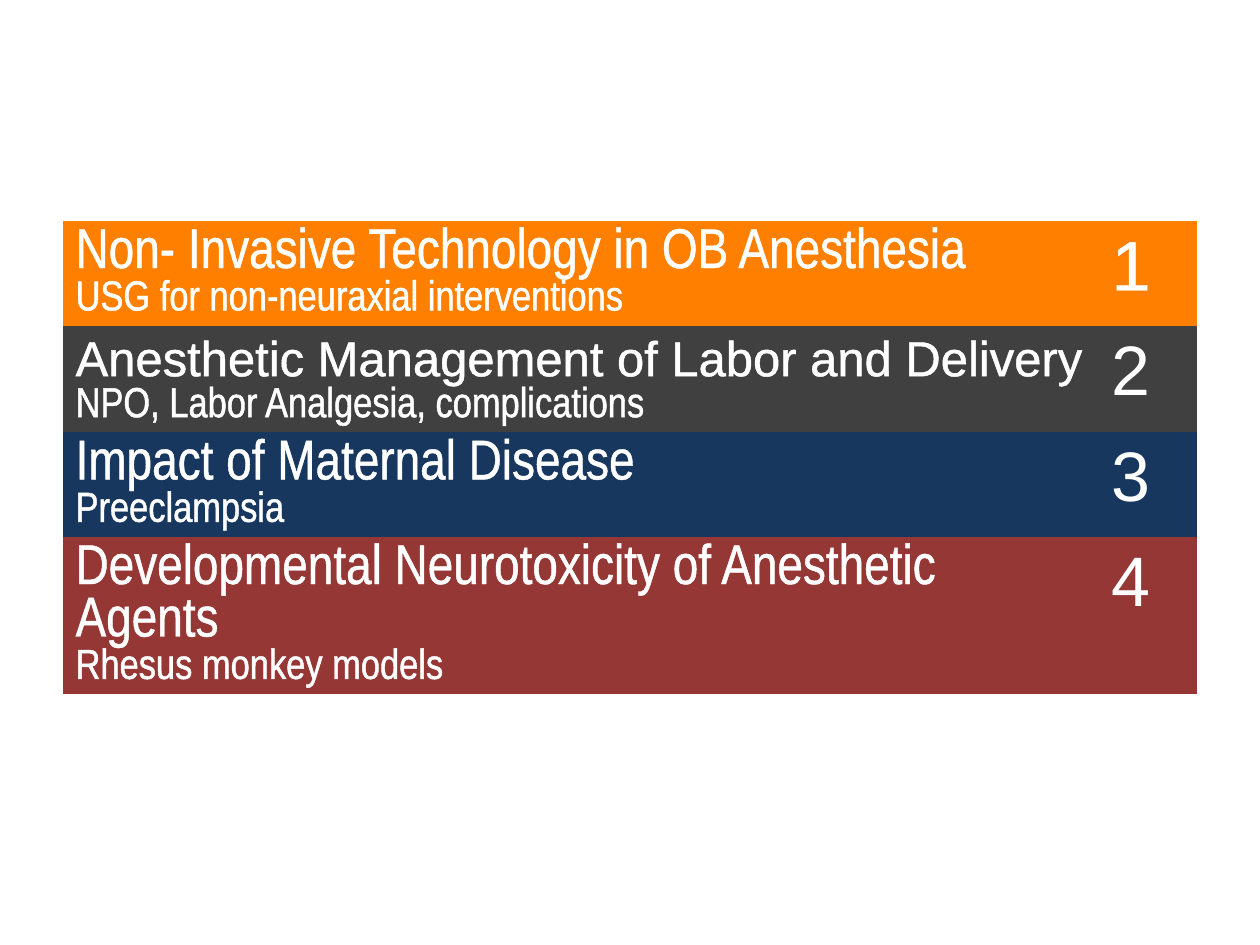
from dataclasses import dataclass

from lxml.etree import SubElement
from pptx import Presentation
from pptx.dml.color import RGBColor
from pptx.oxml.ns import qn
from pptx.util import Pt

EMU_PER_PX = 914400 / 126
NO_STYLE_NO_GRID = "{2D5ABB26-0587-4C30-8999-92F81FD0307C}"


def px(n):
    return round(n * EMU_PER_PX)


@dataclass(frozen=True)
class Theme:
    text: str = "FFFFFF"
    orange: str = "FF8000"
    grey: str = "404040"
    navy: str = "17375E"
    red: str = "953735"
    wide: str = "Arial"
    narrow: str = "Arial Narrow"
    title: int = 32
    title_small: int = 28
    detail: int = 24
    number: int = 40
    outline: float = 1.45


def write(p, text, *, size, font, color, outline=None):
    """Add a run; outline is the width in points of a line round its letters."""
    r = p.add_run()
    r.text = text
    r.font.size = Pt(size)
    r.font.name = font
    r.font.color.rgb = RGBColor.from_string(color)
    if outline:
        rPr = r.font._element
        ln = SubElement(rPr, qn("a:ln"), w=str(Pt(outline)))
        fill = SubElement(ln, qn("a:solidFill"))
        SubElement(fill, qn("a:srgbClr"), val=color)
        rPr.insert(0, ln)  # the schema wants the line first


class SlideBuilder:
    def __init__(self, s, theme):
        self.s, self.theme = s, theme

    def table(self, left, top, col_widths, row_height, row_count, height):
        frame = self.s.shapes.add_table(
            row_count, len(col_widths), px(left), px(top),
            px(sum(col_widths)), px(row_height * row_count))
        table = frame.table
        table.first_row = table.horz_banding = False
        table._tbl.tblPr.find(qn("a:tableStyleId")).text = NO_STYLE_NO_GRID
        for col, width in zip(table.columns, col_widths):
            col.width = px(width)
        frame.height = px(height)
        return table

    def cell(self, cell, fill, lines):
        """Fill a cell; lines holds (text, size, font, outline)."""
        cell.fill.solid()
        cell.fill.fore_color.rgb = RGBColor.from_string(fill)
        tf = cell.text_frame
        for i, (text, size, font, outline) in enumerate(lines):
            p = tf.add_paragraph() if i else tf.paragraphs[0]
            write(p, text, size=size, font=font,
                  color=self.theme.text, outline=outline)


def main():
    t = Theme()
    prs = Presentation()
    prs.slide_width, prs.slide_height = px(1260), px(945)
    slide = SlideBuilder(prs.slides.add_slide(prs.slide_layouts[6]), t)

    # Topics: title, its size and font, detail, band colour, number outline
    topics = [
        ("Non- Invasive Technology in OB Anesthesia", t.title, t.narrow,
         "USG for non-neuraxial interventions", t.orange, t.outline),
        ("Anesthetic Management of Labor and Delivery", t.title_small, t.wide,
         "NPO, Labor Analgesia, complications", t.grey, None),
        ("Impact of Maternal Disease", t.title, t.narrow,
         "Preeclampsia", t.navy, None),
        ("Developmental Neurotoxicity of Anesthetic Agents", t.title, t.narrow,
         "Rhesus monkey models", t.red, None),
    ]

    # Agenda: rows start at a minimum height and grow to fit their text
    table = slide.table(63, 221, (1036, 98), 52, len(topics), 580)
    for i, (title, size, font, detail, fill, outline) in enumerate(topics):
        slide.cell(table.cell(i, 0), fill, [
            (title, size, font, t.outline),
            (detail, t.detail, t.narrow, t.outline)])
        slide.cell(table.cell(i, 1), fill,
                   [(str(i + 1), t.number, t.wide, outline)])

    prs.save("out.pptx")


if __name__ == "__main__":
    main()
